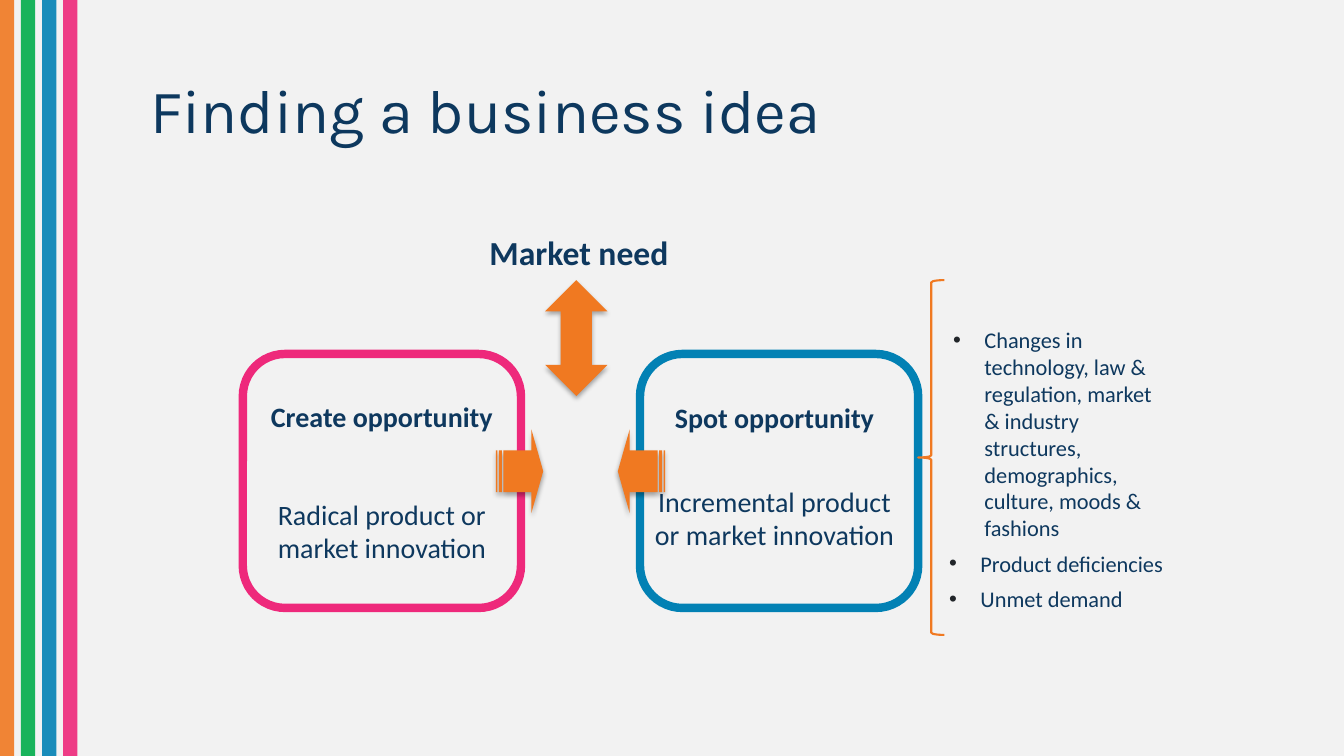
from dataclasses import dataclass
from typing import Any

import pptx
import pptx.dml.color
import pptx.enum.shapes
import pptx.enum.text
import pptx.oxml
import pptx.oxml.ns
import pptx.util

Cm = pptx.util.Cm
Pt = pptx.util.Pt
SHAPE = pptx.enum.shapes.MSO_SHAPE
ALIGN = pptx.enum.text.PP_ALIGN
NAMESPACE = pptx.oxml.ns.nsdecls("a")

NAVY, ORANGE, GREEN, BLUE, PINK = "0E385E", "F07921", "01AD4B", "0281B4", "EE297B"
BACKGROUND = "F2F2F2"


@dataclass
class Area:
    left: float
    top: float
    width: float
    height: float

    def lengths(self) -> tuple:
        return Cm(self.left), Cm(self.top), Cm(self.width), Cm(self.height)


@dataclass
class Line:
    text: str
    size: float = 20
    bold: bool = False
    before: float = 0
    after: float = 0
    align: Any = ALIGN.CENTER
    indent: float = 0  # a bullet is drawn when this is set


@dataclass
class Card:
    area: Area
    color: str
    text_area: Area
    lines: list[Line]


@dataclass
class Arrow:
    kind: Any
    area: Area
    rotation: float = 0
    adjustments: tuple = ()


def rgb(color: str) -> pptx.dml.color.RGBColor:
    return pptx.dml.color.RGBColor.from_string(color)


def apply(target: Any, values: dict[str, Any]) -> None:
    for name, value in values.items():
        setattr(target, name, value)


def add_shape(page: Any, kind: Any, area: Area, fill: str = "",
              line: str = "", weight: float = 0) -> Any:
    shape = page.shapes.add_shape(kind, *area.lengths())
    if fill:
        shape.fill.solid()
        shape.fill.fore_color.rgb = rgb(fill)
    else:
        shape.fill.background()
    if line:
        shape.line.color.rgb = rgb(line)
        shape.line.width = Pt(weight)
    else:
        shape.line.fill.background()
    shape.shadow.inherit = False
    return shape


def add_bullet(para: Any, indent: float) -> None:
    properties = para._p.get_or_add_pPr()
    properties.set("marL", str(Cm(indent)))
    properties.set("indent", str(-Cm(0.79)))
    for tag in ('<a:buClr {}><a:srgbClr val="212529"/></a:buClr>',
                '<a:buFont {} typeface="Arial"/>',
                '<a:buChar {} char="•"/>'):
        properties.append(pptx.oxml.parse_xml(tag.format(NAMESPACE)))


def add_text(page: Any, area: Area, lines: list[Line]) -> None:
    frame = page.shapes.add_textbox(*area.lengths()).text_frame
    frame.word_wrap = True
    for index, line in enumerate(lines):
        para = frame.add_paragraph() if index else frame.paragraphs[0]
        apply(para, {"alignment": line.align, "space_before": Pt(line.before),
                     "space_after": Pt(line.after)})
        if line.indent:
            add_bullet(para, line.indent)
        span = para.add_run()
        span.text = line.text
        apply(span.font, {"name": "Calibri", "size": Pt(line.size), "bold": line.bold})
        span.font.color.rgb = rgb(NAVY)


def add_bar(page: Any, left: float, color: str) -> None:
    bar = add_shape(page, SHAPE.RECTANGLE, Area(left, 0, 0.36, 19.05), color)
    tint = bar._element.spPr.find(".//" + pptx.oxml.ns.qn("a:srgbClr"))
    tint.append(pptx.oxml.parse_xml(f'<a:alpha {NAMESPACE} val="90000"/>'))


def add_arrow(page: Any, arrow: Arrow) -> None:
    shape = add_shape(page, arrow.kind, arrow.area, ORANGE)
    shape.rotation = arrow.rotation
    for index, value in enumerate(arrow.adjustments):
        shape.adjustments[index] = value
    effects = shape._element.spPr.find(pptx.oxml.ns.qn("a:effectLst"))
    effects.append(pptx.oxml.parse_xml(
        f'<a:outerShdw {NAMESPACE} blurRad="{Pt(3.5)}" dist="{Pt(2.2)}" dir="5400000" '
        'rotWithShape="0"><a:srgbClr val="000000"><a:alpha val="32000"/></a:srgbClr>'
        '</a:outerShdw>'))


def add_title(page: Any, text: str) -> None:
    title = page.shapes.title
    left, top, width, height = Area(3.53, 1.02, 22.25, 3.68).lengths()
    apply(title, {"left": left, "top": top, "width": width, "height": height})
    frame = title.text_frame
    apply(frame, {"text": text, "word_wrap": True,
                  "auto_size": pptx.enum.text.MSO_AUTO_SIZE.NONE,
                  "vertical_anchor": pptx.enum.text.MSO_ANCHOR.MIDDLE})
    para = frame.paragraphs[0]
    apply(para, {"alignment": ALIGN.LEFT, "line_spacing": 0.9})
    font = para.runs[0].font
    apply(font, {"name": "Karla", "size": Pt(44)})
    font.color.rgb = rgb("0D385E")


CARDS = [
    Card(Area(6.12, 8.92, 7.01, 6.4), PINK, Area(6.12, 9.93, 7.01, 4.52), [
        Line("Create opportunity", bold=True, after=36),
        Line("Radical product or market innovation", before=10)]),
    Card(Area(16.13, 8.92, 7.01, 6.4), BLUE, Area(16.13, 9.96, 6.78, 4.11), [
        Line("Spot opportunity", bold=True, after=36),
        Line("Incremental product or market innovation")]),
]

ARROWS = [
    Arrow(SHAPE.UP_DOWN_ARROW, Area(13.74, 7.06, 1.57, 2.92)),
    Arrow(SHAPE.STRIPED_RIGHT_ARROW, Area(12.5, 10.82, 1.19, 2.11), 0, (0.5, 0.25)),
    Arrow(SHAPE.STRIPED_RIGHT_ARROW, Area(15.57, 10.82, 1.19, 2.11), 180, (0.5, 0.25)),
]

SOURCES = [
    Line("Changes in technology, law & regulation, market & industry structures, "
         "demographics, culture, moods & fashions", 16, after=6,
         align=ALIGN.LEFT, indent=0.89),
    Line("Product deficiencies", 16, after=6, align=ALIGN.LEFT, indent=0.79),
    Line("Unmet demand", 16, align=ALIGN.LEFT, indent=0.79),
]


def main() -> None:
    deck = pptx.Presentation()
    apply(deck, {"slide_width": Cm(33.87), "slide_height": Cm(19.05)})
    page = deck.slides.add_slide(deck.slide_layouts[5])
    page.background.fill.solid()
    page.background.fill.fore_color.rgb = rgb(BACKGROUND)

    # Coloured bars on the left edge
    for index, color in enumerate((ORANGE, GREEN, BLUE, PINK)):
        add_bar(page, 0.53 * index, color)

    add_title(page, "Finding a business idea")

    # Opportunity cards, the need above them and the arrows between
    for card in CARDS:
        add_shape(page, SHAPE.ROUNDED_RECTANGLE, card.area, BACKGROUND, card.color, 6)
        add_text(page, card.text_area, card.lines)
    add_text(page, Area(5.94, 5.72, 17.3, 1.27), [Line("Market need", 24, bold=True)])
    for arrow in ARROWS:
        add_arrow(page, arrow)

    # Sources of opportunities to spot
    add_shape(page, SHAPE.LEFT_BRACE, Area(23.14, 7.06, 0.66, 8.94), "", ORANGE, 1.5)
    add_text(page, Area(23.67, 8.1, 6.07, 7.52), SOURCES)

    deck.save("out.pptx")


if __name__ == "__main__":
    main()
